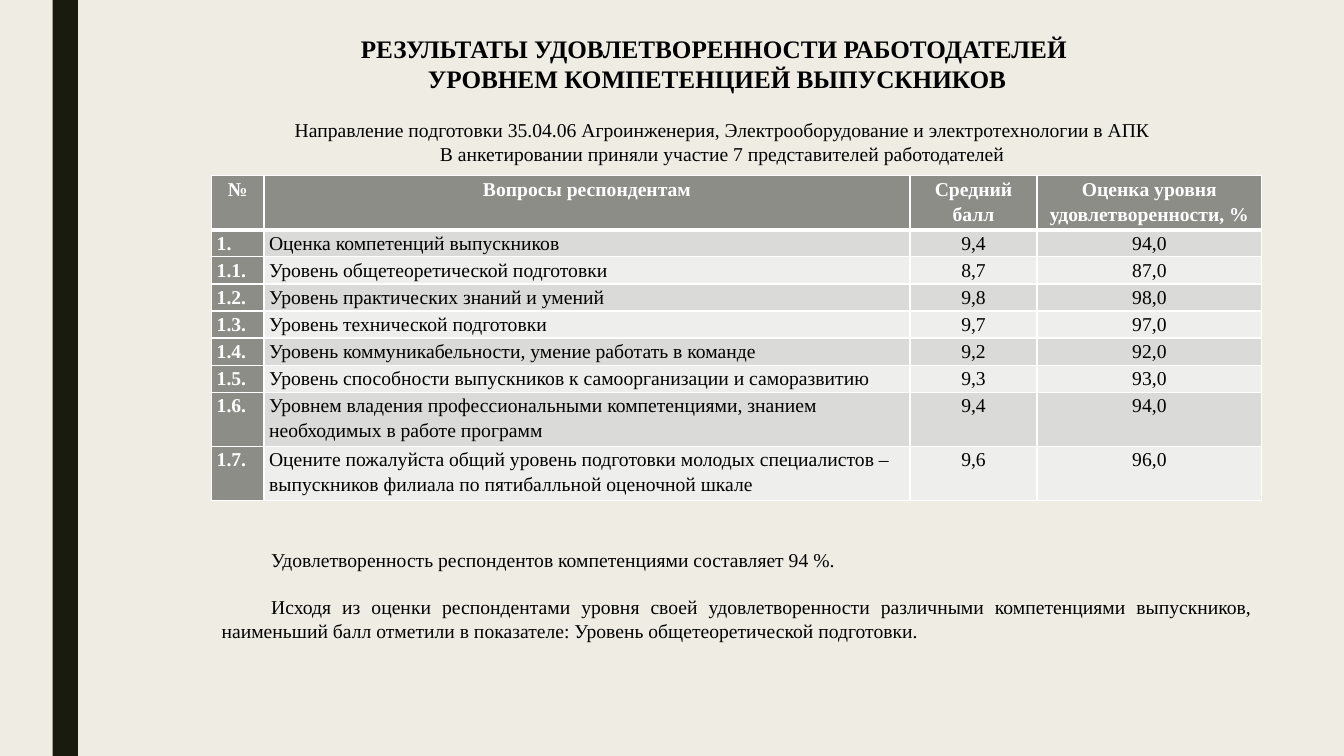
from lxml.etree import SubElement
from pptx import Presentation
from pptx.dml.color import RGBColor as RGB
from pptx.enum.shapes import MSO_SHAPE as SHAPE
from pptx.enum.text import MSO_ANCHOR as ANCHOR, MSO_AUTO_SIZE as AUTO, PP_ALIGN as ALIGN
from pptx.oxml.ns import qn
from pptx.util import Pt

COLORS = {"bg": "EFEDE3", "bar": "191B0E", "head": "8C8D86", "odd": "DADBD9",
          "even": "EEEEED", "white": "FFFFFF", "black": "000000"}
HEADER = ["№", "Вопросы респондентам", "Средний балл", "Оценка уровня удовлетворенности, %"]
RESULTS = [
    ["1.", "Оценка компетенций выпускников", "9,4", "94,0"],
    ["1.1.", "Уровень общетеоретической подготовки", "8,7", "87,0"],
    ["1.2.", "Уровень практических знаний и умений", "9,8", "98,0"],
    ["1.3.", "Уровень технической подготовки", "9,7", "97,0"],
    ["1.4.", "Уровень коммуникабельности, умение работать в команде", "9,2", "92,0"],
    ["1.5.", "Уровень способности выпускников к самоорганизации и саморазвитию", "9,3", "93,0"],
    ["1.6.", "Уровнем владения профессиональными компетенциями, знанием "
             "необходимых в работе программ", "9,4", "94,0"],
    ["1.7.", "Оцените пожалуйста общий уровень подготовки молодых специалистов – "
             "выпускников филиала по пятибалльной оценочной шкале", "9,6", "96,0"],
]
COL_WIDTHS = [37.4, 461.5, 90.7, 160.6]
LINE = 19.3  # height of one table text line
ROW_LINES = [2, 1, 1, 1, 1, 1, 1, 2, 2]


class Deck:
    font = "Times New Roman"

    def __init__(self, prs):
        self.s = prs.slides.add_slide(prs.slide_layouts[6])
        self.fill(self.s.background, "bg")

    def fill(self, target, color):
        target.fill.solid()
        target.fill.fore_color.rgb = RGB.from_string(COLORS[color])

    def run(self, p, text, size=14, color="black", bold=False):
        r = p.add_run()
        r.text = text
        r.font.name, r.font.size, r.font.bold = self.font, Pt(size), bold
        r.font.color.rgb = RGB.from_string(COLORS[color])

    def bar(self, x, y, w, h, color):
        sp = self.s.shapes.add_shape(SHAPE.RECTANGLE, Pt(x), Pt(y), Pt(w), Pt(h))
        sp.shadow.inherit = False
        sp.line.fill.background()
        self.fill(sp, color)

    def text(self, x, y, w, h, lines, size=14, bold=False, align=ALIGN.CENTER,
             indent=0, gap=0, anchor=ANCHOR.TOP):
        tf = self.s.shapes.add_textbox(Pt(x), Pt(y), Pt(w), Pt(h)).text_frame
        tf.word_wrap, tf.auto_size = True, AUTO.SHAPE_TO_FIT_TEXT
        tf.vertical_anchor = anchor
        for i, line in enumerate(lines):
            p = tf.add_paragraph() if i else tf.paragraphs[0]
            p.alignment = align
            p.space_before = Pt(gap if i else 0)
            p._p.get_or_add_pPr().set("indent", str(Pt(indent)))
            self.run(p, line, size, bold=bold)

    def borders(self, cell, widths):
        # Border lines must come before the fill in the cell properties
        tcPr = cell._tc.get_or_add_tcPr()
        for i, (side, width) in enumerate(widths.items()):
            ln = SubElement(tcPr, qn("a:ln" + side), w=str(Pt(width)))
            SubElement(SubElement(ln, qn("a:solidFill")), qn("a:srgbClr"), val=COLORS["white"])
            tcPr.insert(i, ln)

    def cell(self, cell, text, fill, color, bold, align, widths):
        cell.margin_left = cell.margin_right = Pt(3.6)
        cell.margin_top = cell.margin_bottom = 0
        self.fill(cell, fill)
        self.borders(cell, widths)
        p = cell.text_frame.paragraphs[0]
        p.alignment, p.line_spacing = align, 1.15
        self.run(p, text, color=color, bold=bold)

    def table(self, x, y, col_widths, row_heights, rows):
        table = self.s.shapes.add_table(len(rows), len(col_widths), Pt(x), Pt(y),
                                        Pt(sum(col_widths)), Pt(sum(row_heights))).table
        for col, width in zip(table.columns, col_widths):
            col.width = Pt(width)
        for i, (row, height) in enumerate(zip(rows, row_heights)):
            table.rows[i].height = Pt(height)
            widths = {"L": 1, "R": 1, "T": 3 if i == 1 else 1, "B": 1 if i else 3}
            for j, text in enumerate(row):
                strong = i == 0 or j == 0
                fill = "head" if strong else "odd" if i % 2 else "even"
                align = ALIGN.CENTER if i == 0 or j > 1 else ALIGN.LEFT
                self.cell(table.cell(i, j), text, fill, "white" if strong else "black",
                          strong, align, widths)


def main():
    prs = Presentation()
    prs.slide_width, prs.slide_height = Pt(960), Pt(540)
    deck = Deck(prs)

    # Side bar
    deck.bar(37.6, 0, 18, 540, "bar")

    # Title and subtitle
    deck.text(10, 20.2, 1004.4, 51, ["РЕЗУЛЬТАТЫ УДОВЛЕТВОРЕННОСТИ РАБОТОДАТЕЛЕЙ ",
                                     "УРОВНЕМ КОМПЕТЕНЦИЕЙ ВЫПУСКНИКОВ"], size=18, bold=True)
    deck.text(107.3, 80.6, 782, 41, [
        "Направление подготовки 35.04.06 Агроинженерия, Электрооборудование и электротехнологии в АПК",
        "В анкетировании приняли участие 7 представителей работодателей",
    ], indent=35.4, anchor=ANCHOR.MIDDLE)

    # Survey results
    deck.table(151.2, 125.5, COL_WIDTHS, [LINE * n for n in ROW_LINES], [HEADER] + RESULTS)

    # Conclusions
    deck.text(151.2, 388.1, 750.2, 74.9, [
        "Удовлетворенность респондентов компетенциями составляет 94 %.",
        "Исходя из оценки респондентами уровня своей удовлетворенности различными компетенциями "
        "выпускников, наименьший балл отметили в показателе: Уровень общетеоретической подготовки.",
    ], align=ALIGN.JUSTIFY, indent=35.4, gap=16.8)

    prs.save("out.pptx")


if __name__ == "__main__":
    main()
